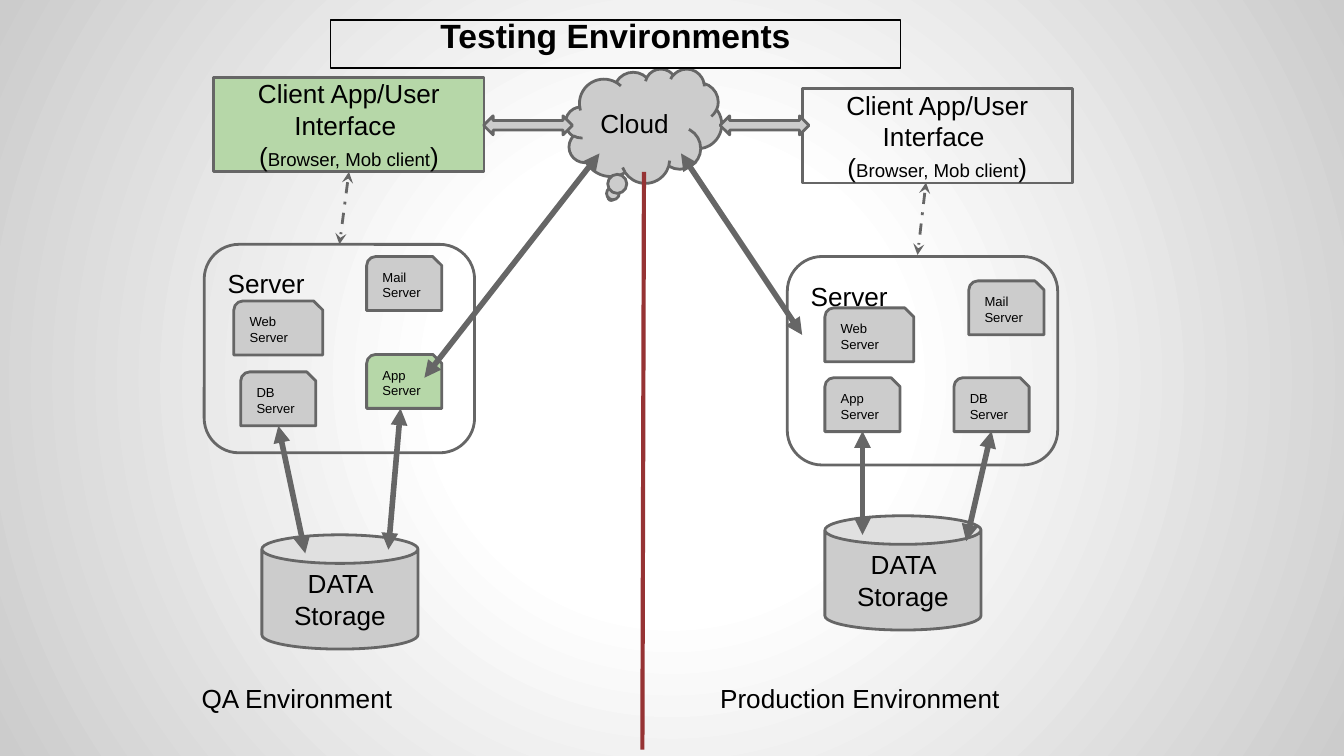
from dataclasses import dataclass

from pptx import Presentation
from pptx.dml.color import RGBColor
from pptx.enum.dml import MSO_LINE
from pptx.enum.shapes import MSO_CONNECTOR, MSO_SHAPE as Kind
from pptx.enum.text import MSO_ANCHOR as Anchor, PP_ALIGN as Align
from pptx.oxml import parse_xml
from pptx.oxml.ns import nsdecls, qn
from pptx.util import Cm, Pt


@dataclass(frozen=True)
class Theme:
    font: str = "Arial"
    ink: str = "000000"
    edge: str = "666666"
    grey: str = "CCCCCC"
    green: str = "B6D7A8"
    red: str = "963334"
    white: str = "FFFFFF"
    title: int = 18
    body: int = 14
    note: int = 10
    tiny: int = 7
    thin: float = 0.75
    outline: float = 1.5
    divider: float = 2.25
    link: float = 3


@dataclass(frozen=True)
class Environment:
    """Part places are in cm, relative to the corner of the server box."""
    name: str
    label_box: tuple
    client: tuple
    client_fill: str
    client_link: tuple  # empty when the link joins the middles of the sides
    nodes: dict
    storage: tuple
    storage_links: tuple


THEME = Theme()
SERVER_SIZE = (5.11, 3.94)
CLIENT_SIZE = (5.11, 1.78)
STORAGE_SIZE = (2.95, 2.16)
NODE_WIDTH, WEB_WIDTH, NODE_HEIGHT = 1.42, 1.68, 1.02
INSET = Cm(0.25)

QA = Environment(
    "QA Environment", (-0.3, 8.03, 5.41, 1.02), (0.18, -3.15), THEME.green, (),
    {"Web": (0.56, 1.07, THEME.grey), "Mail": (3.07, 0.23, THEME.grey),
     "DB": (0.69, 2.41, THEME.grey), "App": (3.07, 2.08, THEME.green)},
    (1.09, 5.49),
    ((1.4, 3.43, 1.91, 5.84), (3.71, 3.1, 3.48, 5.77)))
PRODUCTION = Environment(
    "Production Environment", (-1.52, 7.8, 6.4, 1.02), (0.28, -3.17), "",
    (2.62, -1.4, 2.46, -0.03),
    {"Web": (0.71, 0.97, THEME.grey), "App": (0.71, 2.29, THEME.grey),
     "DB": (3.15, 2.29, THEME.grey), "Mail": (3.43, 0.46, THEME.grey)},
    (0.71, 4.9),
    ((3.86, 3.3, 3.38, 5.38), (1.42, 3.3, 1.42, 5.26)))


def write(shape, paragraphs, align=Align.LEFT, anchor=Anchor.MIDDLE, bold=False):
    """Fill a shape with paragraphs, each a list of (text, size) pairs."""
    frame = shape.text_frame
    layout = {"word_wrap": True, "vertical_anchor": anchor,
              "margin_left": INSET, "margin_right": INSET,
              "margin_top": INSET, "margin_bottom": INSET}
    for name, value in layout.items():
        setattr(frame, name, value)
    for index, spans in enumerate(paragraphs):
        para = frame.add_paragraph() if index else frame.paragraphs[0]
        para.alignment = align
        for text, size in spans:
            span = para.add_run()
            span.text = text
            for name, value in {"name": THEME.font, "size": Pt(size), "bold": bold}.items():
                setattr(span.font, name, value)
            span.font.color.rgb = RGBColor.from_string(THEME.ink)


def add_box(page, kind, box, fill="", line=THEME.edge, width=THEME.outline):
    shape = page.shapes.add_shape(kind, *map(Cm, box))
    shape.shadow.inherit = False
    if fill:
        shape.fill.solid()
        shape.fill.fore_color.rgb = RGBColor.from_string(fill)
    else:
        shape.fill.background()
    shape.line.color.rgb = RGBColor.from_string(line)
    shape.line.width = Pt(width)
    return shape


def add_line(page, ends, color=THEME.edge, width=THEME.link, arrow="triangle", dash=None):
    """Draw a line with the same arrowhead at both ends, or none."""
    line = page.shapes.add_connector(MSO_CONNECTOR.STRAIGHT, *map(Cm, ends))
    line.line.color.rgb = RGBColor.from_string(color)
    line.line.width = Pt(width)
    if dash:
        line.line.dash_style = dash
    if arrow:
        for tag in ("headEnd", "tailEnd"):
            line.line._get_or_add_ln().append(
                parse_xml(f'<a:{tag} {nsdecls("a")} type="{arrow}"/>'))
    line.element.spPr.append(parse_xml(f'<a:effectLst {nsdecls("a")}/>'))
    return line


def paint_background(page):
    page.background.fill.gradient()
    old = page.element.find(".//" + qn("a:gradFill"))
    stops = "".join(f'<a:gs pos="{place * 1000}"><a:srgbClr val="{color}"/></a:gs>'
                    for place, color in ((0, THEME.white), (30, THEME.white), (100, THEME.grey)))
    new = parse_xml(
        f'<a:gradFill {nsdecls("a")}><a:gsLst>{stops}</a:gsLst><a:path path="circle">'
        '<a:fillToRect l="50000" t="50000" r="50000" b="50000"/></a:path></a:gradFill>')
    old.getparent().replace(old, new)


def add_environment(page, left, top, env):
    """Draw client, servers, storage and their links around a server box."""
    def shift(x, y, *size):
        return (left + x, top + y, *size)

    server = add_box(page, Kind.ROUNDED_RECTANGLE, shift(0, 0, *SERVER_SIZE))
    write(server, [[("Server", THEME.body)]], anchor=Anchor.TOP)

    storage = add_box(page, Kind.CAN, shift(*env.storage, *STORAGE_SIZE), THEME.grey)
    write(storage, [[("DATA Storage", THEME.body)]], Align.CENTER)

    for name, (x, y, fill) in env.nodes.items():
        width = WEB_WIDTH if name == "Web" else NODE_WIDTH
        node = add_box(page, Kind.SNIP_ROUND_RECTANGLE, shift(x, y, width, NODE_HEIGHT), fill)
        write(node, [[(f"{name} Server", THEME.tiny)]])

    client = add_box(page, Kind.RECTANGLE, shift(*env.client, *CLIENT_SIZE), env.client_fill)
    write(client, [[("Client App/User Interface ", THEME.body)],
                   [("(", THEME.body), ("Browser, Mob client", THEME.note), (")", THEME.body)]],
          Align.CENTER)

    x1, y1, x2, y2 = env.client_link or (0, 0, 0, 0)
    link = add_line(page, shift(x1, y1) + shift(x2, y2), width=THEME.outline,
                    arrow="stealth", dash=MSO_LINE.DASH_DOT)
    if not env.client_link:
        link.begin_connect(client, 2)
        link.end_connect(server, 0)

    for x1, y1, x2, y2 in env.storage_links:
        add_line(page, shift(x1, y1) + shift(x2, y2))

    label = page.shapes.add_textbox(*map(Cm, shift(*env.label_box)))
    write(label, [[(env.name, THEME.body)]], anchor=Anchor.TOP)


def add_cloud(page, left, top, width, height):
    """Draw the cloud with its links to both sides and the divider below."""
    cloud = add_box(page, Kind.CLOUD_CALLOUT, (left, top, width, height), THEME.grey)
    cloud.adjustments[0], cloud.adjustments[1] = -0.208, 0.625
    write(cloud, [[("Cloud", THEME.body)]])
    for x in (-1.55, 2.92):
        add_box(page, Kind.LEFT_RIGHT_ARROW, (left + x, top + 0.89, 1.68, 0.36), THEME.grey)
    for x1, x2, y2 in ((0.64, -2.67, 5.84), (2.18, 4.47, 5.03)):
        add_line(page, (left + x1, top + 1.6, left + x2, top + y2))
    add_line(page, (left + 1.48, top + 1.95, left + 1.45, top + 12.87),
             THEME.red, THEME.divider, arrow=None)


def add_title(page, box):
    title = add_box(page, Kind.RECTANGLE, box, line=THEME.ink, width=THEME.thin)
    write(title, [[("Testing Environments", THEME.title)]], Align.CENTER, Anchor.BOTTOM, True)


def main():
    deck = Presentation()
    deck.slide_width, deck.slide_height = Cm(25.4), Cm(14.29)
    page = deck.slides.add_slide(deck.slide_layouts[6])
    paint_background(page)
    add_environment(page, 3.86, 4.62, QA)
    add_environment(page, 14.88, 4.85, PRODUCTION)
    add_cloud(page, 10.69, 1.3, 2.95, 2.16)
    add_title(page, (6.25, 0.38, 10.77, 0.91))
    deck.save("out.pptx")


if __name__ == "__main__":
    main()
